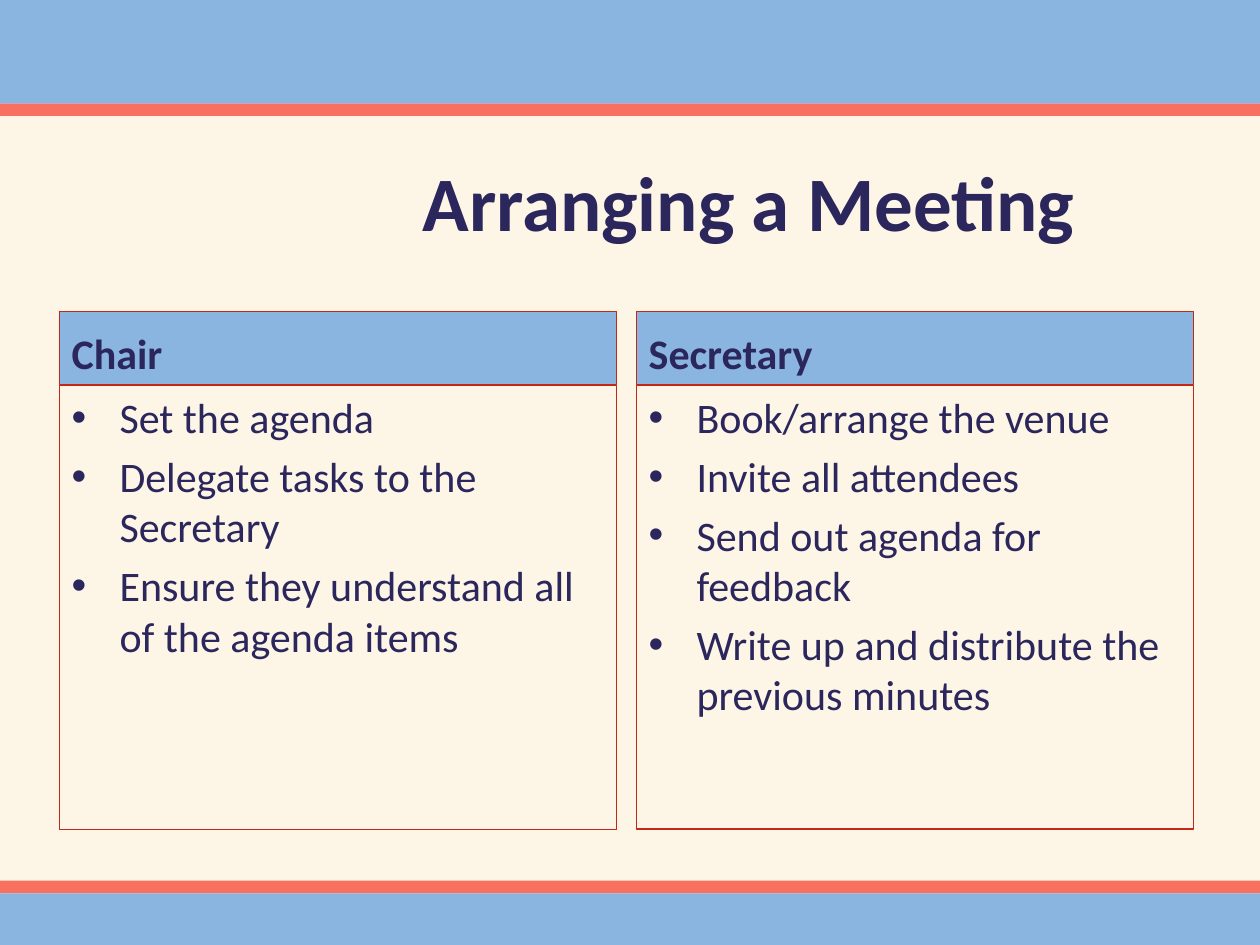
from dataclasses import dataclass

from lxml.etree import SubElement
from pptx import Presentation
from pptx.dml.color import RGBColor
from pptx.enum.shapes import MSO_SHAPE as SHAPE
from pptx.enum.text import MSO_ANCHOR as ANCHOR, MSO_AUTO_SIZE as AUTO, PP_ALIGN as ALIGN
from pptx.oxml.ns import qn
from pptx.util import Inches, Pt


@dataclass(frozen=True)
class Theme:
    font: str = "Calibri"
    background: RGBColor = RGBColor.from_string("FDF5E6")
    blue: RGBColor = RGBColor.from_string("8AB5E1")
    coral: RGBColor = RGBColor.from_string("F87060")
    ink: RGBColor = RGBColor.from_string("2B265C")
    border: RGBColor = RGBColor.from_string("C22817")
    title_size: int = 44
    body_size: int = 24


THEME = Theme()
WIDTH, HEIGHT = 10, 7.5
COLUMNS = [
    ("Chair", 0.5, 0.25, [
        "Set the agenda",
        "Delegate tasks to the Secretary",
        "Ensure they understand all of the agenda items",
    ]),
    ("Secretary", 0.75, 0.75, [
        "Book/arrange the venue",
        "Invite all attendees",
        "Send out agenda for feedback",
        "Write up and distribute the previous minutes",
    ]),
]


def add_rect(slide, box, fill=None, line_width=None):
    sp = slide.shapes.add_shape(SHAPE.RECTANGLE, *map(Inches, box))
    sp.shadow.inherit = False
    if fill is None:
        sp.fill.background()
    else:
        sp.fill.solid()
        sp.fill.fore_color.rgb = fill
    if line_width is None:
        sp.line.fill.background()
    else:
        sp.line.color.rgb = THEME.border
        sp.line.width = Pt(line_width)
    return sp


def add_bullet(p, indent=0.38):
    pPr = p._p.get_or_add_pPr()
    pPr.set("marL", str(Inches(indent)))
    pPr.set("indent", str(-Inches(indent)))
    SubElement(pPr, qn("a:buFont"), typeface="Arial")
    SubElement(pPr, qn("a:buChar"), char="•")


def write_text(sp, lines, size=THEME.body_size, bold=False, align=ALIGN.LEFT,
               anchor=ANCHOR.TOP, bullets=False):
    tf = sp.text_frame
    tf.word_wrap = True
    tf.auto_size = AUTO.NONE
    tf.vertical_anchor = anchor
    for i, line in enumerate(lines):
        p = tf.paragraphs[0] if i == 0 else tf.add_paragraph()
        p.alignment = align
        p.space_before = Pt(0.2 * size if i else 0)
        if bullets:
            add_bullet(p)
        r = p.add_run()
        r.text = line
        r.font.name = THEME.font
        r.font.size = Pt(size)
        r.font.bold = bold
        r.font.color.rgb = THEME.ink


def add_bands(slide):
    edge, top, bottom = 0.1, 0.82, 0.41
    add_rect(slide, (0, top, WIDTH, edge), THEME.coral)
    add_rect(slide, (0, 0, WIDTH, top), THEME.blue)
    add_rect(slide, (0, HEIGHT - bottom - edge, WIDTH, edge), THEME.coral)
    add_rect(slide, (0, HEIGHT - bottom, WIDTH, bottom), THEME.blue)


def place_title(slide, box, text):
    title = slide.shapes.title
    title.left, title.top, title.width, title.height = map(Inches, box)
    write_text(title, [text], size=THEME.title_size, bold=True,
               align=ALIGN.CENTER, anchor=ANCHOR.MIDDLE)


def add_column(slide, box, heading, head_line, body_line, items):
    left, top, width, height = box
    head_height = 0.58
    body_top = top + head_height + 0.01
    head = add_rect(slide, (left, top, width, head_height), THEME.blue, head_line)
    write_text(head, [heading], bold=True, anchor=ANCHOR.BOTTOM)
    body = add_rect(slide, (left, body_top, width, top + height - body_top),
                    line_width=body_line)
    write_text(body, items, bullets=True)


def main():
    prs = Presentation()
    prs.slide_width, prs.slide_height = Inches(WIDTH), Inches(HEIGHT)
    slide = prs.slides.add_slide(prs.slide_layouts[5])
    slide.background.fill.solid()
    slide.background.fill.fore_color.rgb = THEME.background

    add_bands(slide)
    place_title(slide, (2.39, 1.09, 7.11, 1.01), "Arranging a Meeting")
    left, width, gap = 0.47, 4.42, 0.16
    for i, column in enumerate(COLUMNS):
        add_column(slide, (left + i * (width + gap), 2.47, width, 4.11), *column)
    prs.save("out.pptx")


if __name__ == "__main__":
    main()
